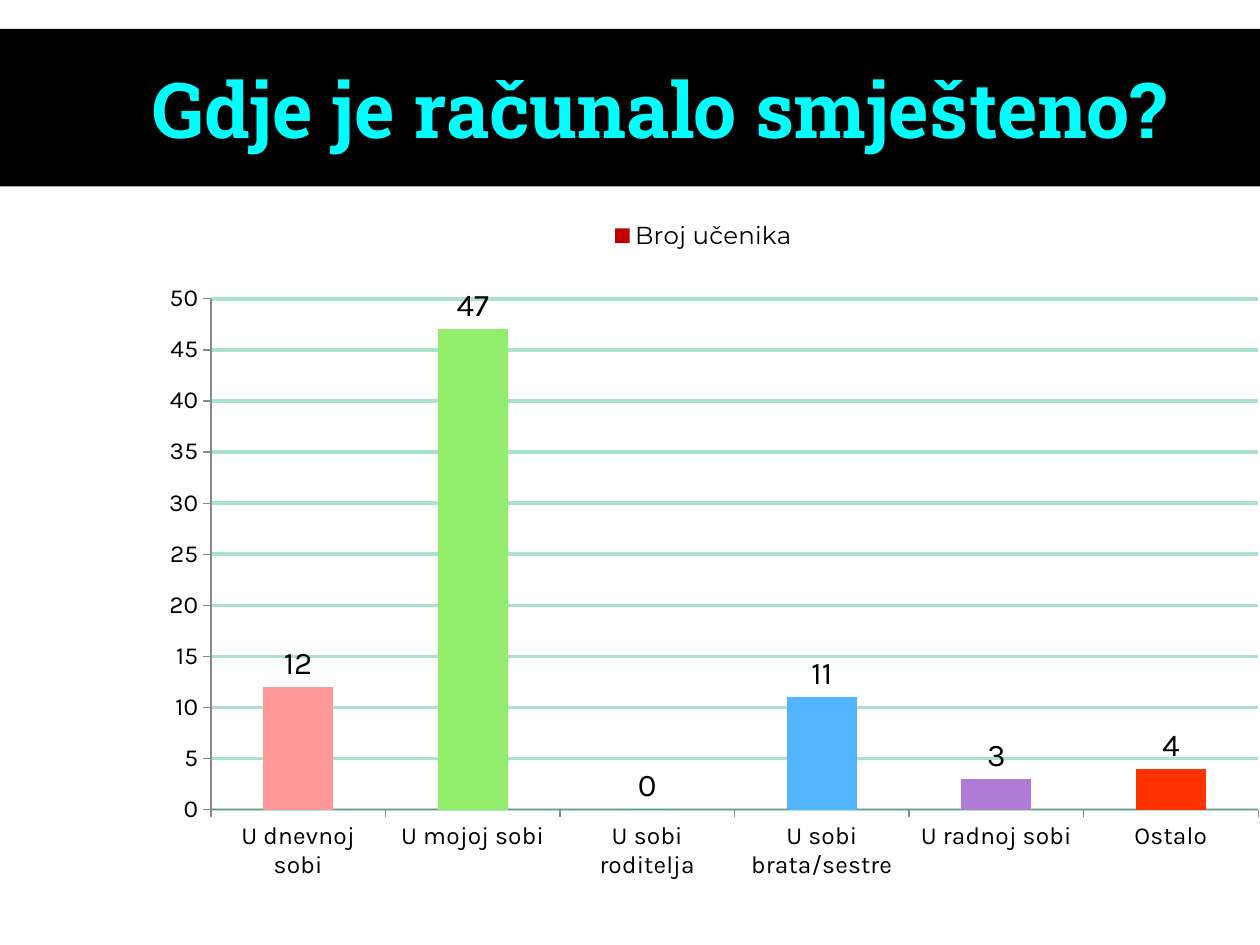
from dataclasses import dataclass

import pptx
import pptx.chart.data
import pptx.dml.color
import pptx.enum.chart
import pptx.enum.text
import pptx.oxml
import pptx.oxml.ns
import pptx.util
from pptx.util import Pt


@dataclass(frozen=True)
class Theme:
    """Colours, fonts and type sizes of the slide."""
    background: str = "FFFFFF"
    band: str = "000000"
    title: str = "00FFFF"
    text: str = "000000"
    grid: str = "AAE2CA"
    axis: str = "888888"
    series: str = "C00000"
    columns: tuple = ("FF9999", "93EE6E", "00B050", "53B5FF", "B07BD7", "FF3300")
    title_font: str = "Roboto Slab"
    chart_font: str = "Karla"
    legend_font: str = "Montserrat"
    title_size: int = 44
    value_size: int = 18
    label_size: int = 14


THEME = Theme()
ANSWERS = {
    "U dnevnoj sobi": 12,
    "U mojoj sobi": 47,
    "U sobi roditelja": 0,
    "U sobi brata/sestre": 11,
    "U radnoj sobi": 3,
    "Ostalo": 4,
}


def rgb(value):
    """Turn a hex string into a colour."""
    return pptx.dml.color.RGBColor.from_string(value)


def paint(fill, color):
    """Make a fill solid in the given colour."""
    fill.solid()
    fill.fore_color.rgb = rgb(color)


def format_font(font, name, size, color, bold=False):
    """Set the typeface, size, colour and weight of a font."""
    font.name = name
    font.size = Pt(size)
    font.bold = bold
    font.color.rgb = rgb(color)


def write_text(shape, text, *, indent=0, alignment=None, **font_format):
    """Write one formatted paragraph into a shape."""
    frame = shape.text_frame
    frame.word_wrap = True
    frame.auto_size = pptx.enum.text.MSO_AUTO_SIZE.NONE
    frame.vertical_anchor = pptx.enum.text.MSO_ANCHOR.MIDDLE
    paragraph = frame.paragraphs[0]
    properties = paragraph._p.get_or_add_pPr()
    properties.set("marL", str(Pt(indent)))
    properties.set("indent", "0")
    paragraph.alignment = alignment
    run = paragraph.add_run()
    run.text = text
    format_font(run.font, **font_format)


def add_title_band(slide, left, top, width, height):
    """Place the title placeholder as a filled band."""
    title = slide.shapes.title
    title.left, title.top, title.width, title.height = map(Pt, (left, top, width, height))
    paint(title.fill, THEME.band)
    write_text(title, "Gdje je računalo smješteno?", indent=35,
               alignment=pptx.enum.text.PP_ALIGN.CENTER, name=THEME.title_font,
               size=THEME.title_size, color=THEME.title, bold=True)


def set_plot_layout(chart, **fractions):
    """Fix the inner plot area as fractions of the chart."""
    plot_area = chart._chartSpace.chart.plotArea
    for layout in plot_area.findall(pptx.oxml.ns.qn("c:layout")):
        plot_area.remove(layout)
    modes = "".join(f'<c:{side}Mode val="edge"/>' for side in "xy")
    values = "".join(f'<c:{key} val="{value}"/>' for key, value in fractions.items())
    plot_area.insert(0, pptx.oxml.parse_xml(
        f'<c:layout {pptx.oxml.ns.nsdecls("c")}><c:manualLayout>'
        f'<c:layoutTarget val="inner"/>{modes}{values}</c:manualLayout></c:layout>'))


def format_axes(chart):
    """Format both axes and the value gridlines."""
    for axis in (chart.category_axis, chart.value_axis):
        axis.major_tick_mark = pptx.enum.chart.XL_TICK_MARK.OUTSIDE
        axis.minor_tick_mark = pptx.enum.chart.XL_TICK_MARK.NONE
        axis.format.line.color.rgb = rgb(THEME.axis)
        axis.format.line.width = Pt(0.75)
        format_font(axis.tick_labels.font, THEME.chart_font, THEME.label_size, THEME.text)
    value_axis = chart.value_axis
    value_axis.minimum_scale, value_axis.maximum_scale, value_axis.major_unit = 0, 50, 5
    value_axis.has_major_gridlines = True
    grid_line = value_axis.major_gridlines.format.line
    grid_line.color.rgb = rgb(THEME.grid)
    grid_line.width = Pt(2)


def format_columns(plot):
    """Colour each column and label it with its value."""
    plot.gap_width = 150
    plot.vary_by_categories = False
    series = plot.series[0]
    paint(series.format.fill, THEME.series)
    for index, color in enumerate(THEME.columns):
        paint(series.points[index].format.fill, color)
    labels = series.data_labels
    labels.show_value = True
    labels.position = pptx.enum.chart.XL_LABEL_POSITION.OUTSIDE_END
    format_font(labels.font, THEME.chart_font, THEME.value_size, THEME.text)


def add_answer_chart(slide, left, top, width, height):
    """Place the column chart of answers in the given box."""
    data = pptx.chart.data.CategoryChartData()
    data.categories = list(ANSWERS)
    data.add_series("Broj učenika", list(ANSWERS.values()))
    frame = slide.shapes.add_chart(pptx.enum.chart.XL_CHART_TYPE.COLUMN_CLUSTERED,
                                   *map(Pt, (left, top, width, height)), data)
    chart = frame.chart
    format_font(chart.font, THEME.chart_font, THEME.value_size, THEME.text)
    chart.has_title = False
    chart.has_legend = True
    chart.legend.position = pptx.enum.chart.XL_LEGEND_POSITION.TOP
    chart.legend.include_in_layout = False
    format_font(chart.legend.font, THEME.legend_font, THEME.label_size, THEME.text)
    format_axes(chart)
    format_columns(chart.plots[0])
    set_plot_layout(chart, x=0.056, y=0.125, w=0.944, h=0.692)


def main():
    """Build and save the slide."""
    presentation = pptx.Presentation()
    presentation.slide_width, presentation.slide_height = Pt(720), Pt(540)
    slide = presentation.slides.add_slide(presentation.slide_layouts[5])
    paint(slide.background.fill, THEME.background)
    add_title_band(slide, 0, 16.5, 720, 90)
    add_answer_chart(slide, 85, 118, 635, 422)
    presentation.save("out.pptx")


if __name__ == "__main__":
    main()
